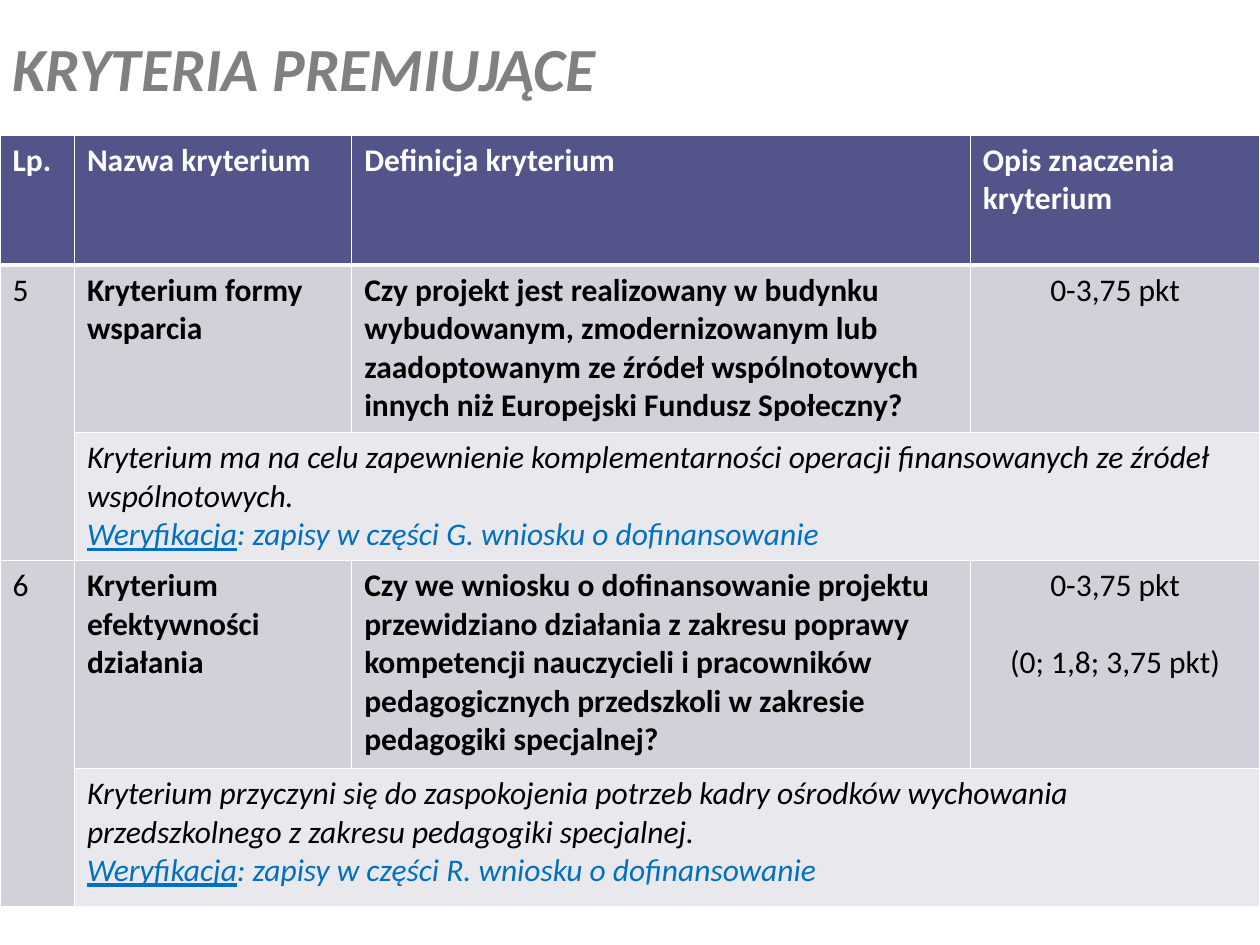
from dataclasses import dataclass

from lxml.etree import SubElement
from pptx import Presentation
from pptx.dml.color import RGBColor as Rgb
from pptx.enum.text import MSO_ANCHOR as Anchor, PP_ALIGN as Align
from pptx.oxml.ns import qn
from pptx.util import Cm, Pt

TITLE = "KRYTERIA PREMIUJĄCE"
HEADERS = ["Lp.", "Nazwa kryterium", "Definicja kryterium", "Opis znaczenia kryterium"]
CRITERIA = [
    {
        "number": "5",
        "name": "Kryterium formy wsparcia",
        "definition": "Czy projekt jest realizowany w budynku wybudowanym, zmodernizowanym lub "
                      "zaadoptowanym ze źródeł wspólnotowych innych niż Europejski Fundusz Społeczny?",
        "points": ["0-3,75 pkt"],
        "purpose": "Kryterium ma na celu zapewnienie komplementarności operacji finansowanych "
                   "ze źródeł wspólnotowych.",
        "check": ("Weryfikacja", ": zapisy w części G. wniosku o dofinansowanie"),
    },
    {
        "number": "6",
        "name": "Kryterium efektywności działania",
        "definition": "Czy we wniosku o dofinansowanie projektu przewidziano działania z zakresu "
                      "poprawy kompetencji nauczycieli i pracowników pedagogicznych przedszkoli "
                      "w zakresie pedagogiki specjalnej?",
        "points": ["0-3,75 pkt", "(0; 1,8; 3,75 pkt)"],
        "purpose": "Kryterium przyczyni się do zaspokojenia potrzeb kadry ośrodków wychowania "
                   "przedszkolnego z zakresu pedagogiki specjalnej.",
        "check": ("Weryfikacja", ": zapisy w części R. wniosku o dofinansowanie"),
    },
]
COLUMN_WIDTHS = [1.5, 5.59, 12.47, 5.84]
ROW_HEIGHTS = [2.62, 3.38, 2.39, 4.19, 2.79]
TITLE_HEIGHT = 2.72


@dataclass(frozen=True)
class Theme:
    font: str = "Calibri"
    title_size: float = 35
    body_size: float = 18
    line_gap: float = 22
    title: str = "808080"
    header_fill: str = "53548A"
    criterion_fill: str = "D1D1DA"
    note_fill: str = "E9E9ED"
    light: str = "FFFFFF"
    dark: str = "000000"
    check: str = "0070C0"


THEME = Theme()


def style(paragraph, color, size=THEME.body_size, bold=False, italic=False):
    font = paragraph.font
    font.name, font.size = THEME.font, Pt(size)
    font.bold, font.italic = bold, italic
    font.color.rgb = Rgb.from_string(color)


def draw_borders(cell, bottom_width):
    """Add white cell edges; they must precede the fill in the cell's XML."""
    properties = cell._tc.get_or_add_tcPr()
    for side in ("lnL", "lnR", "lnT", "lnB"):
        width = bottom_width if side == "lnB" else 1
        line = SubElement(properties, qn(f"a:{side}"), w=str(Pt(width)))
        fill = SubElement(line, qn("a:solidFill"))
        SubElement(fill, qn("a:srgbClr"), val=THEME.light)


def paint(cell, color):
    cell.fill.solid()
    cell.fill.fore_color.rgb = Rgb.from_string(color)


def write(cell, text, color=THEME.dark, **looks):
    cell.text = text
    paragraph = cell.text_frame.paragraphs[0]
    style(paragraph, color, **looks)
    return paragraph


def add_title(slide):
    box = slide.shapes.add_textbox(0, 0, Cm(24.13), Cm(TITLE_HEIGHT))
    frame = box.text_frame
    frame.word_wrap = True
    frame.vertical_anchor = Anchor.MIDDLE
    paragraph = frame.paragraphs[0]
    paragraph.text = TITLE
    style(paragraph, THEME.title, THEME.title_size, bold=True, italic=True)


def add_criterion(table, top, criterion):
    """Fill two rows: the criterion itself, then its merged note."""
    number, name, definition, points = (table.cell(top, column) for column in range(4))
    note = table.cell(top + 1, 1)
    number.merge(table.cell(top + 1, 0))
    note.merge(table.cell(top + 1, 3))

    write(number, criterion["number"])
    write(name, criterion["name"], bold=True)
    write(definition, criterion["definition"], bold=True)

    write(points, "\n".join(criterion["points"]))
    for index, paragraph in enumerate(points.text_frame.paragraphs):
        style(paragraph, THEME.dark)
        paragraph.alignment = Align.CENTER
        if index:
            paragraph.space_before = Pt(THEME.line_gap)

    write(note, criterion["purpose"], italic=True)
    check = note.text_frame.add_paragraph()
    for text, underlined in zip(criterion["check"], (True, False)):
        span = check.add_run()
        span.text = text
        span.font.underline = underlined
    style(check, THEME.check, italic=True)


def add_criteria_table(slide):
    table = slide.shapes.add_table(
        len(ROW_HEIGHTS), len(COLUMN_WIDTHS), 0, Cm(TITLE_HEIGHT),
        Cm(sum(COLUMN_WIDTHS)), Cm(sum(ROW_HEIGHTS))).table
    table.horz_banding = False
    for column, width in zip(table.columns, COLUMN_WIDTHS):
        column.width = Cm(width)
    for index, (row, height) in enumerate(zip(table.rows, ROW_HEIGHTS)):
        row.height = Cm(height)
        for column, cell in enumerate(row.cells):
            draw_borders(cell, bottom_width=1 if index else 3)
            if index == 0:
                paint(cell, THEME.header_fill)
            elif index % 2 or column == 0:
                paint(cell, THEME.criterion_fill)
            else:
                paint(cell, THEME.note_fill)

    for column, header in enumerate(HEADERS):
        write(table.cell(0, column), header, THEME.light, bold=True)
    for index, criterion in enumerate(CRITERIA):
        add_criterion(table, 1 + 2 * index, criterion)


def main():
    deck = Presentation()
    deck.slide_width, deck.slide_height = Cm(25.4), Cm(19.05)
    slide = deck.slides.add_slide(deck.slide_layouts[6])
    add_criteria_table(slide)
    add_title(slide)
    deck.save("out.pptx")


if __name__ == "__main__":
    main()
